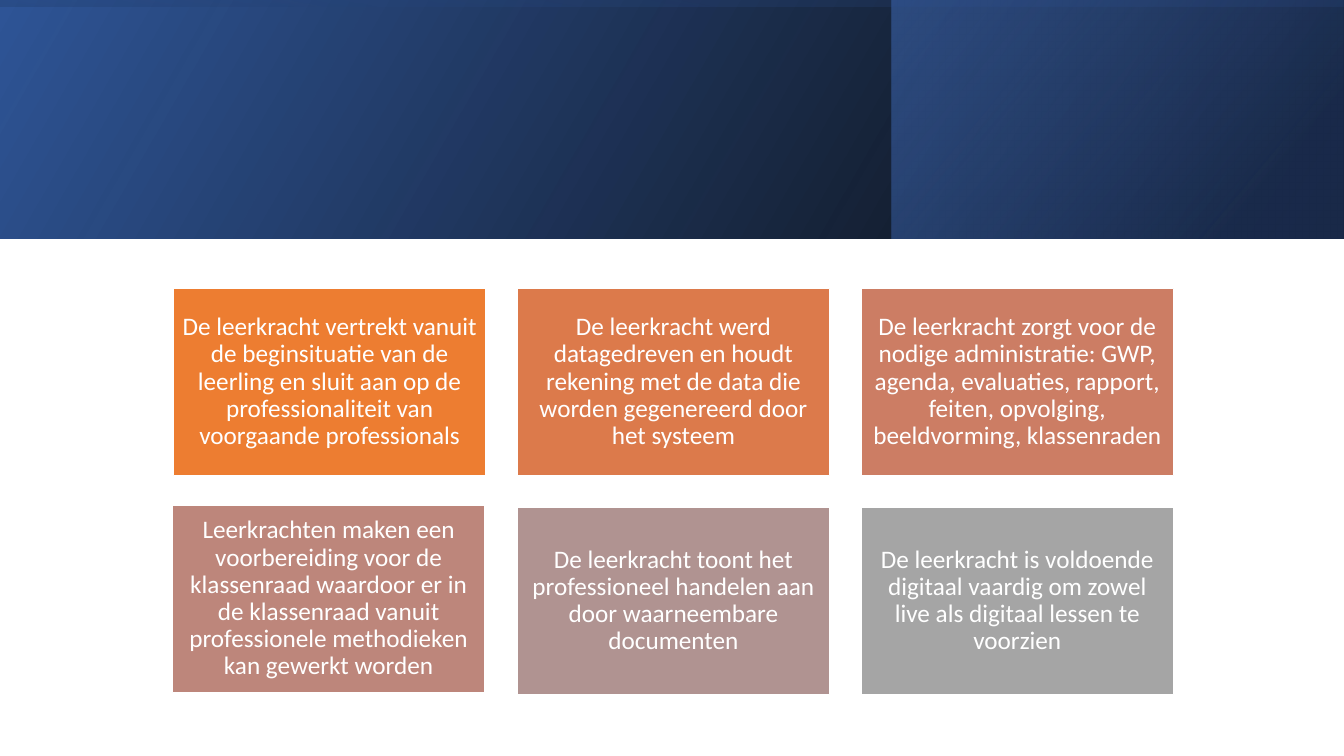
from pptx import Presentation
from pptx.dml.color import RGBColor
from pptx.enum.shapes import MSO_SHAPE as SHAPE
from pptx.enum.text import MSO_ANCHOR as ANCHOR, PP_ALIGN as ALIGN
from pptx.oxml.ns import qn
from pptx.util import Inches, Pt

WHITE = RGBColor(0xFF, 0xFF, 0xFF)
BLACK = RGBColor(0x00, 0x00, 0x00)
DEEP_BLUE = RGBColor(0x2F, 0x55, 0x97)
NAVY = RGBColor(0x20, 0x38, 0x64)
BLUE = RGBColor(0x44, 0x72, 0xC4)
ORANGE = RGBColor(0xED, 0x7D, 0x31)
COPPER = RGBColor(0xDC, 0x7A, 0x4B)
CORAL = RGBColor(0xCC, 0x7D, 0x64)
ROSE = RGBColor(0xBD, 0x86, 0x7B)
MAUVE = RGBColor(0xB0, 0x93, 0x91)
GREY = RGBColor(0xA5, 0xA5, 0xA5)

SLIDE_W, SLIDE_H = 13.33, 7.5
BANNER_H = 2.37
SIDE_LEFT, SIDE_W = 8.84, 4.48
OVERLAY_OFFSET = (SLIDE_W - BANNER_H) / 2

# left, top, width, height, rotation, angle, (position, colour, opacity) stops
BANNER_LAYERS = [
    (0, 0, SLIDE_W, BANNER_H, 0, 330,
     [(0, BLACK, 96), (100, DEEP_BLUE, 100)]),
    (SIDE_LEFT, 0, SIDE_W, BANNER_H, 0, 320,
     [(19, NAVY, 68), (100, BLUE, 48)]),
    (OVERLAY_OFFSET, -OVERLAY_OFFSET, BANNER_H, SLIDE_W, 270, 350,
     [(23, DEEP_BLUE, 16), (99, BLACK, 45)]),
]

TASKS = [
    ("De leerkracht vertrekt vanuit de beginsituatie van de leerling en sluit "
     "aan op de professionaliteit van voorgaande professionals", ORANGE),
    ("De leerkracht werd datagedreven en houdt rekening met de data die "
     "worden gegenereerd door het systeem", COPPER),
    ("De leerkracht zorgt voor de nodige administratie: GWP, agenda, "
     "evaluaties, rapport, feiten, opvolging, beeldvorming, klassenraden", CORAL),
    ("Leerkrachten maken een voorbereiding voor de klassenraad waardoor er in "
     "de klassenraad vanuit professionele methodieken kan gewerkt worden", ROSE),
    ("De leerkracht toont het professioneel handelen aan door waarneembare "
     "documenten", MAUVE),
    ("De leerkracht is voldoende digitaal vaardig om zowel live als digitaal "
     "lessen te voorzien", GREY),
]
COLUMNS = 3
GRID_LEFT, GRID_TOP = 1.72, 2.86
TASK_W, TASK_H = 3.1, 1.86
STEP_X, STEP_Y = 3.41, 2.17
NUDGES = {3: (-0.01, -0.02)}
INSET = 0.07


def add_rectangle(slide, left, top, width, height):
    rectangle = slide.shapes.add_shape(
        SHAPE.RECTANGLE, Inches(left), Inches(top), Inches(width), Inches(height))
    rectangle.shadow.inherit = False
    return rectangle


def add_banner_layer(slide, left, top, width, height, rotation, angle, stops):
    layer = add_rectangle(slide, left, top, width, height)
    layer.rotation = rotation
    layer.line.fill.background()
    layer.fill.gradient()
    layer.fill.gradient_angle = 360 - angle
    for stop, (position, colour, _) in zip(layer.fill.gradient_stops, stops):
        stop.position = position / 100
        stop.color.rgb = colour
    properties = layer._element.spPr
    properties.find(qn("a:xfrm")).set("flipH", "1")
    colours = properties.find(qn("a:gradFill")).iter(qn("a:srgbClr"))
    for colour, (_, _, opacity) in zip(list(colours), stops):
        alpha = colour.makeelement(qn("a:alpha"), {"val": str(opacity * 1000)})
        colour.append(alpha)


def add_task(slide, index, text, colour):
    row, column = divmod(index, COLUMNS)
    nudge_x, nudge_y = NUDGES.get(index, (0, 0))
    task = add_rectangle(slide, GRID_LEFT + column * STEP_X + nudge_x,
                         GRID_TOP + row * STEP_Y + nudge_y, TASK_W, TASK_H)
    task.fill.solid()
    task.fill.fore_color.rgb = colour
    task.line.color.rgb = WHITE
    task.line.width = Pt(1)
    frame = task.text_frame
    frame.word_wrap = True
    frame.vertical_anchor = ANCHOR.MIDDLE
    frame.margin_left = frame.margin_right = Inches(INSET)
    frame.margin_top = frame.margin_bottom = Inches(INSET)
    paragraph = frame.paragraphs[0]
    paragraph.text = text
    paragraph.alignment = ALIGN.CENTER
    paragraph.line_spacing = 0.9
    paragraph.font.name = "Calibri"
    paragraph.font.size = Pt(18)
    paragraph.font.color.rgb = WHITE


def main():
    deck = Presentation()
    deck.slide_width, deck.slide_height = Inches(SLIDE_W), Inches(SLIDE_H)
    slide = deck.slides.add_slide(deck.slide_layouts[6])
    for layer in BANNER_LAYERS:
        add_banner_layer(slide, *layer)
    for index, (text, colour) in enumerate(TASKS):
        add_task(slide, index, text, colour)
    deck.save("out.pptx")


if __name__ == "__main__":
    main()
